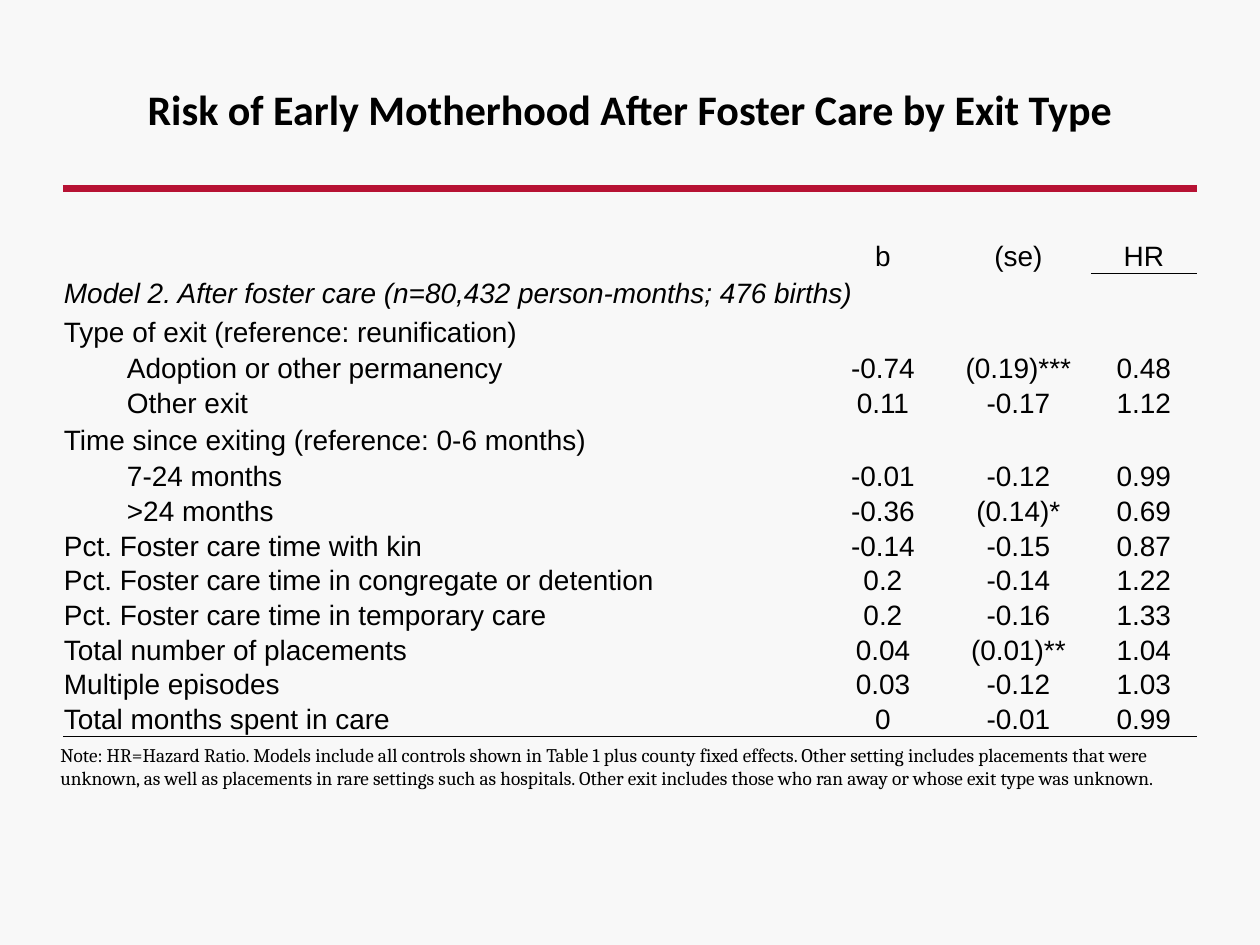
from dataclasses import dataclass

from lxml import etree
from pptx import Presentation
from pptx.dml.color import RGBColor
from pptx.enum.shapes import MSO_CONNECTOR
from pptx.enum.text import MSO_ANCHOR, PP_ALIGN
from pptx.oxml.ns import qn
from pptx.util import Pt

PX = 914400 // 126
STRAIGHT = MSO_CONNECTOR.STRAIGHT
TOP, MIDDLE = MSO_ANCHOR.TOP, MSO_ANCHOR.MIDDLE
LEFT, CENTER = PP_ALIGN.LEFT, PP_ALIGN.CENTER
NO_GRID_STYLE = "{2D5ABB26-0587-4C30-8999-92F81FD0307C}"


@dataclass(frozen=True)
class Theme:
    """Colours, fonts and type sizes of the slide."""
    background: str = "F8F8F8"
    ink: str = "000000"
    accent: str = "B71234"
    title_font: str = "Calibri"
    table_font: str = "Arial"
    note_font: str = "Cambria"
    title_size: int = 24
    table_size: int = 16
    note_size: int = 11
    divider_width: float = 4
    header_rule: float = 0.5
    closing_rule: float = 1


THEME = Theme()
TITLE = "Risk of Early Motherhood After Foster Care by Exit Type"
NOTE = (
    "Note: HR=Hazard Ratio. Models include all controls shown in Table 1 plus county fixed "
    "effects. Other setting includes placements that were unknown, as well as placements in "
    "rare settings such as hospitals. Other exit includes those who ran away or whose exit "
    "type was unknown."
)
MODEL = "Model 2. After foster care (n=80,432 person-months; 476 births)"
ROWS = [
    ("", "b", "(se)", "HR"),
    (MODEL, "", "", ""),
    ("Type of exit (reference: reunification)", "", "", ""),
    ("Adoption or other permanency", "-0.74", "(0.19)***", "0.48"),
    ("Other exit", "0.11", "-0.17", "1.12"),
    ("Time since exiting (reference: 0-6 months)", "", "", ""),
    ("7-24 months", "-0.01", "-0.12", "0.99"),
    (">24 months", "-0.36", "(0.14)*", "0.69"),
    ("Pct. Foster care time with kin", "-0.14", "-0.15", "0.87"),
    ("Pct. Foster care time in congregate or detention", "0.2", "-0.14", "1.22"),
    ("Pct. Foster care time in temporary care", "0.2", "-0.16", "1.33"),
    ("Total number of placements", "0.04", "(0.01)**", "1.04"),
    ("Multiple episodes", "0.03", "-0.12", "1.03"),
    ("Total months spent in care", "0", "-0.01", "0.99"),
]
INDENTED_ROWS = {3, 4, 6, 7}
COLUMN_WIDTHS = (757, 126, 145, 106)
ROW_HEIGHT = 28
LAST_ROW = len(ROWS) - 1
RULES = {(0, 3, "lnB"): THEME.header_rule, (1, 3, "lnT"): THEME.header_rule}
RULES.update({(LAST_ROW, c, "lnB"): THEME.closing_rule for c in range(len(COLUMN_WIDTHS))})


def px(*lengths):
    """Turn pixel lengths into EMU."""
    return [n * PX for n in lengths]


def set_attributes(target, values):
    """Set each named attribute of an object."""
    for name, value in values.items():
        setattr(target, name, value)


def write(p, text, align, font, size, bold=False, italic=False):
    """Put one formatted run into a paragraph."""
    p.alignment = align
    r = p.add_run()
    r.text = text
    set_attributes(r.font, {"name": font, "size": Pt(size), "bold": bold, "italic": italic})
    r.font.color.rgb = RGBColor.from_string(THEME.ink)


def add_text(s, box, text, anchor, align, font, size, bold=False):
    """Add a wrapping text box."""
    tf = s.shapes.add_textbox(*px(*box)).text_frame
    set_attributes(tf, {"word_wrap": True, "vertical_anchor": anchor})
    write(tf.paragraphs[0], text, align, font, size, bold)


def add_divider(s, left, right, y):
    """Add the accent line under the title."""
    line = s.shapes.add_connector(STRAIGHT, *px(left, y, right, y))
    line.line.color.rgb = RGBColor.from_string(THEME.accent)
    line.line.width = Pt(THEME.divider_width)
    etree.SubElement(line._element.spPr, qn("a:effectLst"))


def set_borders(cell, row, col):
    """Draw the rules of a cell and clear its other sides."""
    tc_pr = cell._tc.get_or_add_tcPr()
    for side in ("lnL", "lnR", "lnT", "lnB"):
        ln = etree.SubElement(tc_pr, qn(f"a:{side}"))
        width = RULES.get((row, col, side))
        if width:
            ln.set("w", str(Pt(width)))
            fill = etree.SubElement(ln, qn("a:solidFill"))
            etree.SubElement(fill, qn("a:srgbClr"), val=THEME.ink)
        else:
            etree.SubElement(ln, qn("a:noFill"))


def fill_cell(cell, text, row, col):
    """Format one table cell and write its text."""
    set_borders(cell, row, col)
    cell.fill.background()
    set_attributes(cell, {
        "margin_left": PX, "margin_right": PX, "margin_top": PX, "margin_bottom": 0,
        "vertical_anchor": MIDDLE,
    })
    p = cell.text_frame.paragraphs[0]
    if text:
        if col == 0 and row in INDENTED_ROWS:
            p.level = 1
            set_indent(p, 63)
        write(p, text, CENTER if col else LEFT, THEME.table_font, THEME.table_size,
              italic=text == MODEL)
    elif row == 0:
        p._p.get_or_add_endParaRPr().set("sz", str(THEME.table_size * 100))


def set_indent(p, left):
    """Indent a whole paragraph from the left."""
    p_pr = p._p.get_or_add_pPr()
    p_pr.set("marL", str(left * PX))
    p_pr.set("indent", "0")


def add_results_table(s, box):
    """Add the table of model results."""
    frame = s.shapes.add_table(len(ROWS), len(COLUMN_WIDTHS), *px(*box))
    table = frame.table
    set_attributes(table, {"first_row": False, "horz_banding": False})
    table._tbl.tblPr.find(qn("a:tableStyleId")).text = NO_GRID_STYLE
    for column, width in zip(table.columns, COLUMN_WIDTHS):
        column.width = width * PX
    for r, values in enumerate(ROWS):
        table.rows[r].height = ROW_HEIGHT * PX
        for c, text in enumerate(values):
            fill_cell(table.cell(r, c), text, r, c)
    for row, last_col in ((1, 2), (2, 1)):
        table.cell(row, 0).merge(table.cell(row, last_col))
    frame.height = box[3] * PX


def main():
    """Build and save the slide."""
    prs = Presentation()
    prs.slide_width, prs.slide_height = px(1260, 945)
    s = prs.slides.add_slide(prs.slide_layouts[6])
    s.background.fill.solid()
    s.background.fill.fore_color.rgb = RGBColor.from_string(THEME.background)
    add_divider(s, 63, 1197, 189)
    add_text(s, (63, 38, 1134, 141), TITLE, MIDDLE, CENTER,
             THEME.title_font, THEME.title_size, bold=True)
    add_results_table(s, (63, 239, 1134, 498))
    add_text(s, (48, 737, 1149, 59), NOTE, TOP, LEFT, THEME.note_font, THEME.note_size)
    prs.save("out.pptx")


if __name__ == "__main__":
    main()
